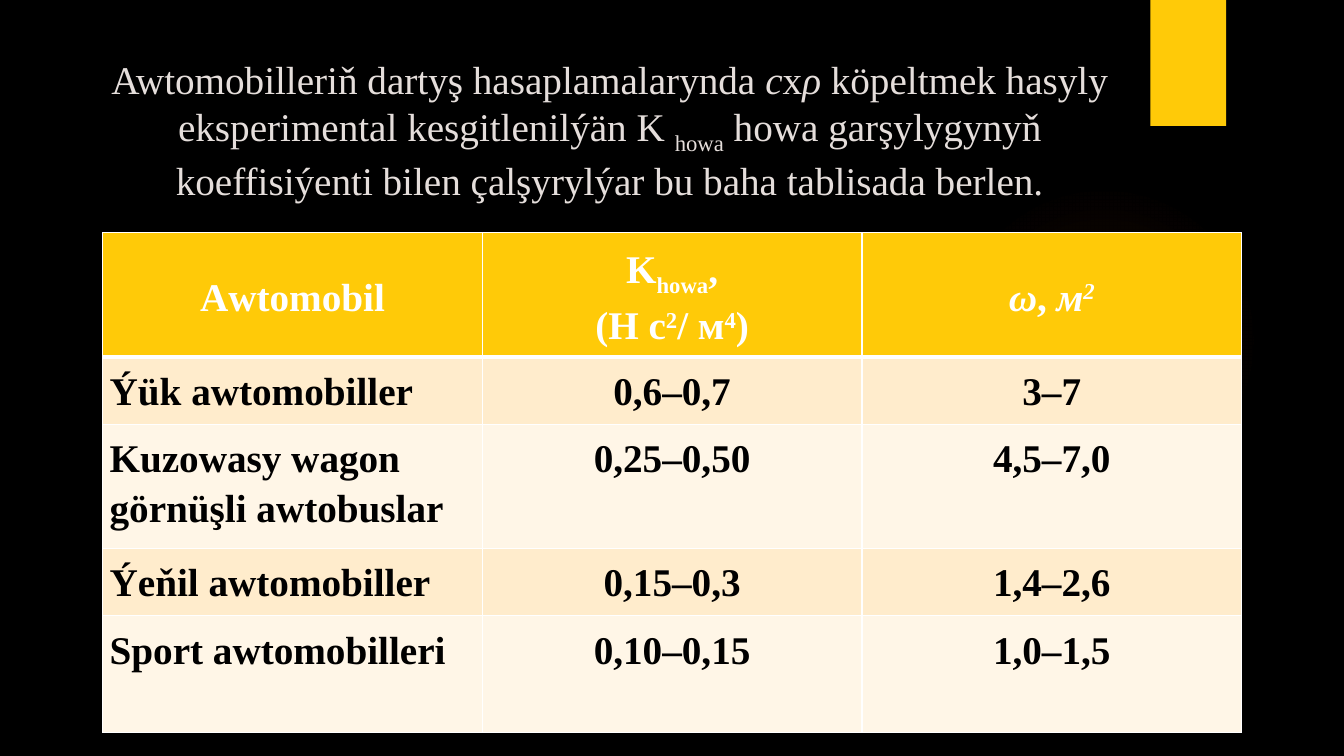
from dataclasses import dataclass

from lxml import etree
from pptx import Presentation
from pptx.dml.color import RGBColor
from pptx.enum.shapes import MSO_SHAPE
from pptx.enum.text import MSO_ANCHOR, PP_ALIGN
from pptx.oxml import parse_xml
from pptx.oxml.ns import qn
from pptx.util import Pt

CENTER, LEFT = PP_ALIGN.CENTER, PP_ALIGN.LEFT
TOP, MIDDLE = MSO_ANCHOR.TOP, MSO_ANCHOR.MIDDLE
OVAL, RECTANGLE = MSO_SHAPE.OVAL, MSO_SHAPE.RECTANGLE
TITLE_ONLY = 5
FONT, SIZE = "Times New Roman", 28
BLACK, WHITE, YELLOW = "000000", "FFFFFF", "FFCA08"
TITLE_COLOUR, GLOW_COLOUR = "E5DEDB", "E64823"
BANDS = ("FFECCC", "FFF6E7")
GLOW_STOPS = ((0, 7), (36, 6), (69, 0))  # position and opacity, percent
SUB, SUPER = -25000, 30000
CELL_INSET = 5.04
COLUMN_WIDTH = 271.2
ROW_HEIGHTS = (88.56, 48.24, 88.56, 48.24, 83.52)


@dataclass(frozen=True)
class Span:
    text: str
    italic: bool = False
    baseline: int = 0


TITLE = [
    Span("Awtomobilleriň dartyş hasaplamalarynda "),
    Span("с", italic=True),
    Span("х"),
    Span("ρ", italic=True),
    Span(" köpeltmek hasyly eksperimental kesgitlenilýän K "),
    Span("howa", baseline=SUB),
    Span(" howa garşylygynyň koeffisiýenti bilen çalşyrylýar bu baha tablisada berlen."),
]
HEADERS = [
    [[Span("Аwtomobil")]],
    [
        [Span("K"), Span("howa", baseline=SUB), Span(",")],
        [Span("(Н с"), Span("2", baseline=SUPER), Span("/ м"),
         Span("4", baseline=SUPER), Span(")")],
    ],
    [[Span("ω", italic=True), Span(", "), Span("м", italic=True),
      Span("2", italic=True, baseline=SUPER)]],
]
VEHICLES = [
    ("Ýük awtomobiller", "0,6–0,7", "3–7"),
    ("Kuzowasy wagon görnüşli awtobuslar", "0,25–0,50", "4,5–7,0"),
    ("Ýeňil awtomobiller", "0,15–0,3", "1,4–2,6"),
    ("Sport awtomobilleri", "0,10–0,15", "1,0–1,5"),
]


def rgb(hex_colour: str) -> RGBColor:
    return RGBColor.from_string(hex_colour)


def write_spans(paragraph, spans: list[Span], colour: str, bold: bool) -> None:
    for span in spans:
        run = paragraph.add_run()
        run.text = span.text
        font = run.font
        font.name, font.size = FONT, Pt(SIZE)
        font.bold, font.italic = bold, span.italic
        font.color.rgb = rgb(colour)
        if span.baseline:
            run._r.get_or_add_rPr().set("baseline", str(span.baseline))


def add_plain_shape(slide, kind, left: float, top: float, width: float, height: float):
    shape = slide.shapes.add_shape(kind, Pt(left), Pt(top), Pt(width), Pt(height))
    shape.shadow.inherit = False
    shape.line.fill.background()
    return shape


def add_glow(slide) -> None:
    glow = add_plain_shape(slide, OVAL, 677.5, 131.8, 221.8, 221.8)
    glow.fill.gradient()
    stops = "".join(
        f'<a:gs pos="{position * 1000}"><a:srgbClr val="{GLOW_COLOUR}">'
        f'<a:alpha val="{opacity * 1000}"/></a:srgbClr></a:gs>'
        for position, opacity in GLOW_STOPS
    )
    radial = parse_xml(
        '<a:gradFill xmlns:a="http://schemas.openxmlformats.org/drawingml/2006/main">'
        f"<a:gsLst>{stops}</a:gsLst>"
        '<a:path path="circle"><a:fillToRect l="50000" t="50000" r="50000" b="50000"/>'
        "</a:path></a:gradFill>"
    )
    properties = glow._element.spPr
    properties.replace(properties.find(qn("a:gradFill")), radial)


def add_borders(cell, bottom_width: float) -> None:
    properties = cell._tc.get_or_add_tcPr()
    widths = {"a:lnL": 1, "a:lnR": 1, "a:lnT": 1, "a:lnB": bottom_width}
    for tag, width in widths.items():
        line = etree.SubElement(properties, qn(tag), w=str(Pt(width)))
        fill = etree.SubElement(line, qn("a:solidFill"))
        etree.SubElement(fill, qn("a:srgbClr"), val=WHITE)


def fill_cell(cell, lines: list[list[Span]], fill: str, colour: str,
              align=CENTER, anchor=TOP, bottom_width: float = 1) -> None:
    add_borders(cell, bottom_width)
    cell.fill.solid()
    cell.fill.fore_color.rgb = rgb(fill)
    cell.margin_left = cell.margin_right = Pt(CELL_INSET)
    cell.margin_top = cell.margin_bottom = Pt(CELL_INSET)
    cell.vertical_anchor = anchor
    frame = cell.text_frame
    for index, spans in enumerate(lines):
        paragraph = frame.add_paragraph() if index else frame.paragraphs[0]
        paragraph.alignment = align
        paragraph.line_spacing = 1.15
        write_spans(paragraph, spans, colour, bold=True)


def format_title(title) -> None:
    title.left, title.top, title.width, title.height = Pt(51), Pt(36), Pt(769), Pt(110)
    frame = title.text_frame
    frame.word_wrap = True
    frame.vertical_anchor = TOP
    paragraph = frame.paragraphs[0]
    paragraph.alignment = CENTER
    paragraph.line_spacing = 1.0
    write_spans(paragraph, TITLE, TITLE_COLOUR, bold=False)


def add_coefficient_table(slide) -> None:
    table = slide.shapes.add_table(
        len(ROW_HEIGHTS), len(HEADERS), Pt(73.3), Pt(166.3),
        Pt(COLUMN_WIDTH * len(HEADERS)), Pt(sum(ROW_HEIGHTS)),
    ).table
    table.horz_banding = False
    for column in table.columns:
        column.width = Pt(COLUMN_WIDTH)
    for row, height in zip(table.rows, ROW_HEIGHTS):
        row.height = Pt(height)
    for column, lines in enumerate(HEADERS):
        fill_cell(table.cell(0, column), lines, YELLOW, WHITE,
                  anchor=MIDDLE, bottom_width=3)
    for row, vehicle in enumerate(VEHICLES, start=1):
        for column, text in enumerate(vehicle):
            fill_cell(table.cell(row, column), [[Span(text)]],
                      BANDS[(row - 1) % 2], BLACK, align=CENTER if column else LEFT)


def main() -> None:
    presentation = Presentation()
    presentation.slide_width, presentation.slide_height = Pt(960), Pt(540)
    slide = presentation.slides.add_slide(presentation.slide_layouts[TITLE_ONLY])
    slide.background.fill.solid()
    slide.background.fill.fore_color.rgb = rgb(BLACK)

    add_glow(slide)
    tab = add_plain_shape(slide, RECTANGLE, 821.8, 0, 54, 90)
    tab.fill.solid()
    tab.fill.fore_color.rgb = rgb(YELLOW)
    format_title(slide.shapes.title)
    add_coefficient_table(slide)
    presentation.save("out.pptx")


if __name__ == "__main__":
    main()
